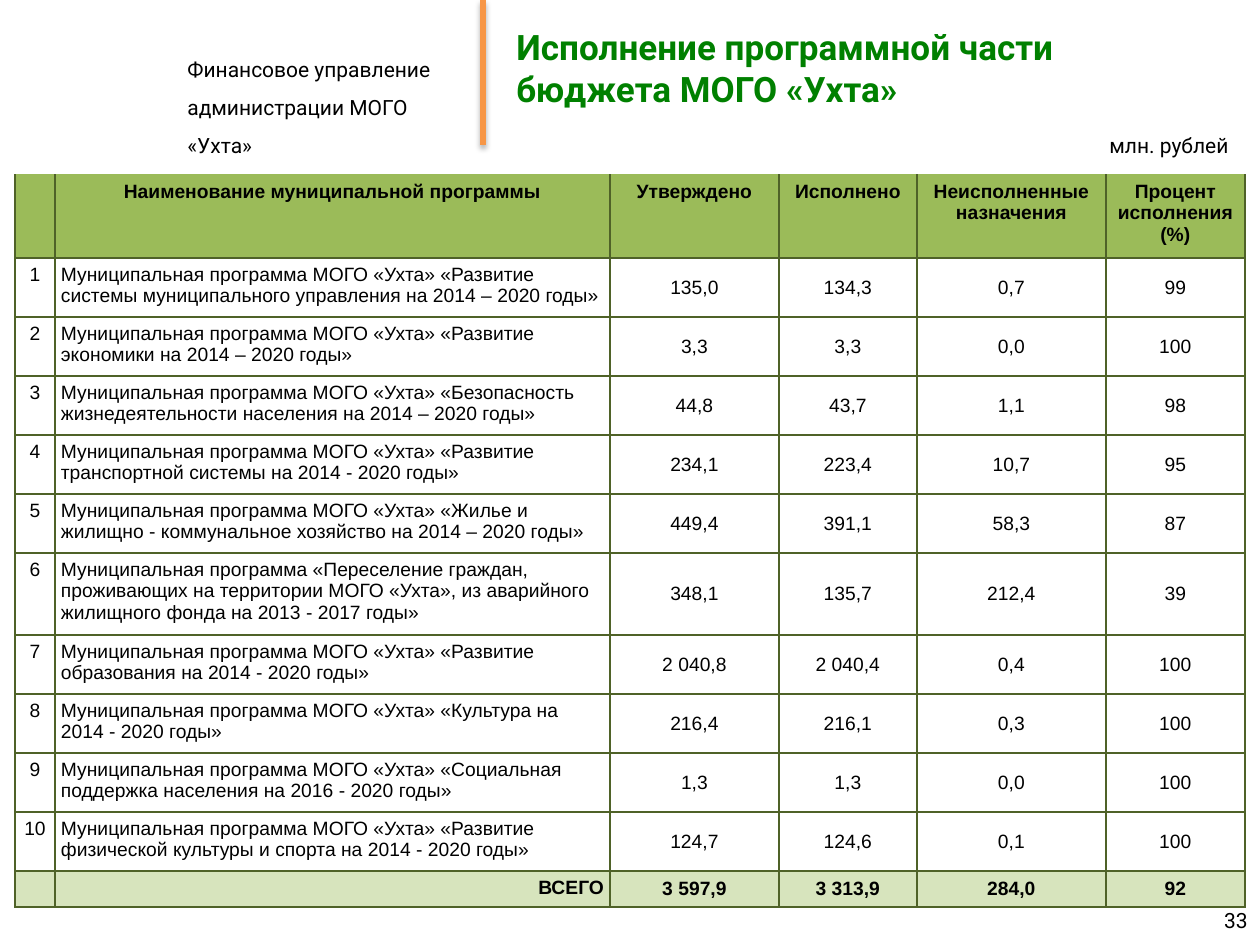
from lxml import etree
from pptx import Presentation
from pptx.dml.color import RGBColor
from pptx.enum.shapes import MSO_CONNECTOR
from pptx.enum.text import MSO_ANCHOR, PP_ALIGN
from pptx.oxml import parse_xml
from pptx.oxml.ns import nsdecls, qn
from pptx.util import Pt

PX = 914400 / 126
LEFT, CENTER, RIGHT = PP_ALIGN.LEFT, PP_ALIGN.CENTER, PP_ALIGN.RIGHT
TOP, MIDDLE = MSO_ANCHOR.TOP, MSO_ANCHOR.MIDDLE
STRAIGHT = MSO_CONNECTOR.STRAIGHT

BLACK = RGBColor(0x00, 0x00, 0x00)
GREEN = RGBColor(0x00, 0x80, 0x00)
ORANGE = RGBColor(0xF7, 0x96, 0x46)
HEADER_FILL = RGBColor(0x9B, 0xBB, 0x59)
TOTAL_FILL = RGBColor(0xD7, 0xE4, 0xBD)
BORDER = RGBColor(0x4F, 0x62, 0x28)

HEADER = ["", "Наименование муниципальной программы", "Утверждено", "Исполнено",
          "Неисполненные назначения", "Процент исполнения\n(%)"]
UKHTA = "Муниципальная программа МОГО «Ухта» "
PROGRAMS = [
    (UKHTA + "«Развитие системы муниципального управления на 2014 – 2020 годы»",
     "135,0", "134,3", "0,7", "99"),
    (UKHTA + "«Развитие экономики на 2014 – 2020 годы»", "3,3", "3,3", "0,0", "100"),
    (UKHTA + "«Безопасность жизнедеятельности населения на 2014 – 2020 годы»",
     "44,8", "43,7", "1,1", "98"),
    (UKHTA + "«Развитие транспортной системы на 2014 - 2020 годы»",
     "234,1", "223,4", "10,7", "95"),
    (UKHTA + "«Жилье и жилищно - коммунальное хозяйство на 2014 – 2020 годы»",
     "449,4", "391,1", "58,3", "87"),
    ("Муниципальная программа «Переселение граждан, проживающих на территории "
     "МОГО «Ухта», из аварийного жилищного фонда на 2013 - 2017 годы»",
     "348,1", "135,7", "212,4", "39"),
    (UKHTA + "«Развитие образования на 2014 - 2020 годы»",
     "2 040,8", "2 040,4", "0,4", "100"),
    (UKHTA + "«Культура на 2014 - 2020 годы»", "216,4", "216,1", "0,3", "100"),
    (UKHTA + "«Социальная поддержка населения на 2016 - 2020 годы»",
     "1,3", "1,3", "0,0", "100"),
    (UKHTA + "«Развитие физической культуры и спорта на 2014 - 2020 годы»",
     "124,7", "124,6", "0,1", "100"),
]
TOTAL = ["", "ВСЕГО", "3 597,9", "3 313,9", "284,0", "92"]
COLUMNS = [40, 555, 169, 138, 189, 139]
ROWS = [83] + [59] * 5 + [82] + [59] * 4 + [36]


def emu(*lengths):
    return [round(n * PX) for n in lengths]


class SlideBuilder:
    font, cell_font, cell_size, cell_inset = "Roboto", "Arial", 11, 6

    def __init__(self, slide):
        self.slide = slide

    def fill_text(self, tf, text, font, size, color=BLACK, bold=False, align=LEFT,
                  spacing=None):
        tf.text = text
        for p in tf.paragraphs:
            p.alignment = align
            if spacing:
                p.line_spacing = spacing
            for r in p.runs:
                r.font.name, r.font.size, r.font.bold = font, Pt(size), bold
                r.font.color.rgb = color
            if not p.runs:
                etree.SubElement(p._p, qn("a:endParaRPr"), sz=str(size * 100))

    def text(self, box, text, size=12, anchor=TOP, wrap=True, **style):
        tf = self.slide.shapes.add_textbox(*emu(*box)).text_frame
        tf.word_wrap, tf.vertical_anchor = wrap, anchor
        self.fill_text(tf, text, self.font, size, **style)

    def line(self, x1, y1, x2, y2, color, width):
        line = self.slide.shapes.add_connector(STRAIGHT, *emu(x1, y1, x2, y2))
        line.line.color.rgb, line.line.width = color, Pt(width)
        line._element.spPr.append(parse_xml(
            f'<a:effectLst {nsdecls("a")}><a:outerShdw blurRad="{Pt(3.1)}" dist="{Pt(1.8)}" '
            'dir="5400000" rotWithShape="0"><a:srgbClr val="000000"><a:alpha val="35000"/>'
            '</a:srgbClr></a:outerShdw></a:effectLst>'))

    def borders(self, cell, top):
        sides = {"lnL": BORDER, "lnR": BORDER, "lnT": top, "lnB": BORDER}
        for i, (tag, color) in enumerate(sides.items()):
            cell._tc.get_or_add_tcPr().insert(i, parse_xml(
                f'<a:{tag} {nsdecls("a")} w="{Pt(1)}"><a:solidFill><a:srgbClr val="{color}"/>'
                f'</a:solidFill></a:{tag}>'))

    def cell(self, cell, text, align, anchor, bold, fill, top):
        cell.margin_left = cell.margin_right = cell.margin_top = cell.margin_bottom = \
            emu(self.cell_inset)[0]
        cell.vertical_anchor = anchor
        self.fill_text(cell.text_frame, text, self.cell_font, self.cell_size,
                       bold=bold, align=align)
        if fill is None:
            cell.fill.background()
        else:
            cell.fill.solid()
            cell.fill.fore_color.rgb = fill
        self.borders(cell, top)

    def table(self, x, y, columns, heights, rows):
        table = self.slide.shapes.add_table(
            len(rows), len(columns), *emu(x, y, sum(columns), sum(heights))).table
        table.first_row = table.horz_banding = False
        for col, width in zip(table.columns, emu(*columns)):
            col.width = width
        for row, height in zip(table.rows, emu(*heights)):
            row.height = height
        last = len(rows) - 1
        for i, row in enumerate(rows):
            fill = {0: HEADER_FILL, last: TOTAL_FILL}.get(i)
            for j, text in enumerate(row):
                align = CENTER
                if j == 1 and i:
                    align = RIGHT if i == last else LEFT
                self.cell(table.cell(i, j), text, align,
                          MIDDLE if i and j > 1 else TOP,
                          bold=fill is not None, fill=fill,
                          top=BORDER if i else HEADER_FILL)


def main():
    prs = Presentation()
    prs.slide_width, prs.slide_height = emu(1260, 945)
    s = SlideBuilder(prs.slides.add_slide(prs.slide_layouts[6]))

    # Heading: department, divider, title
    s.text((175, 38, 310, 83), "Финансовое управление\nадминистрации МОГО «Ухта»", spacing=1.5)
    s.line(483, 0, 483, 145, ORANGE, 3)
    s.text((504, 4, 615, 127), "Исполнение программной части бюджета МОГО «Ухта»",
           size=20, anchor=MIDDLE, color=GREEN, bold=True)

    # Programme table
    rows = [HEADER, *([str(n), *row] for n, row in enumerate(PROGRAMS, 1)), TOTAL]
    s.table(15, 175, COLUMNS, ROWS, rows)

    # Unit and page number
    s.text((1097, 126, 145, 38), "млн. рублей", wrap=False)
    s.text((966, 895, 294, 50), "33", anchor=MIDDLE, align=RIGHT)

    prs.save("out.pptx")


if __name__ == "__main__":
    main()
